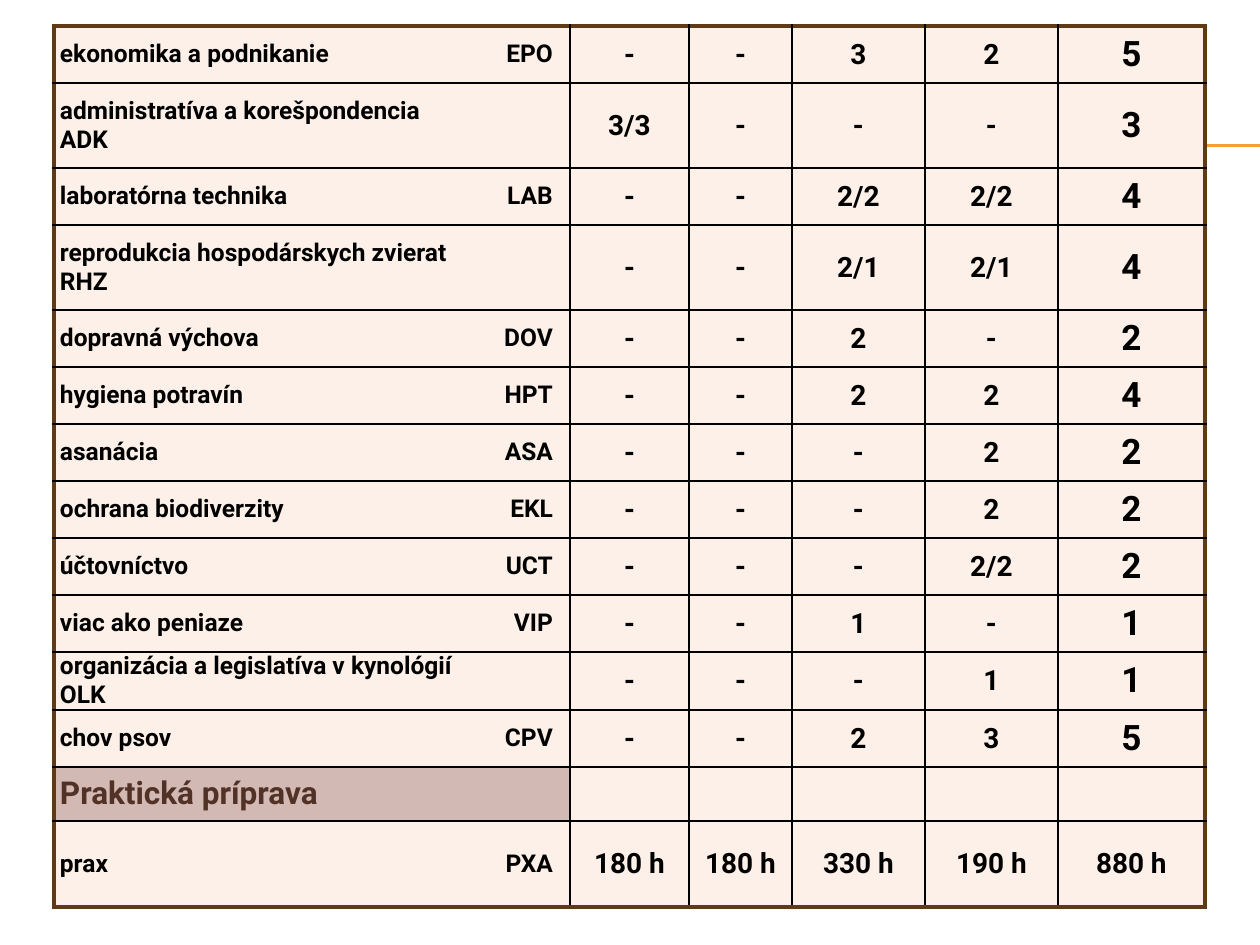
from lxml.etree import SubElement
from pptx import Presentation
from pptx.dml.color import RGBColor
from pptx.enum.shapes import MSO_CONNECTOR
from pptx.enum.text import MSO_ANCHOR, PP_ALIGN
from pptx.oxml import parse_xml
from pptx.oxml.ns import nsdecls, qn
from pptx.util import Emu, Pt

PX = 914400 / 126

BLACK = RGBColor(0x00, 0x00, 0x00)
FRAME = RGBColor(0x60, 0x3A, 0x14)
CREAM = RGBColor(0xFC, 0xF0, 0xE8)
ROSE = RGBColor(0xD3, 0xB9, 0xB3)
BROWN = RGBColor(0x52, 0x32, 0x27)
ORANGE = RGBColor(0xF0, 0xA2, 0x2E)

# Subject and code, four years, total; a tab sets the code at the right
SUBJECTS = [
    ("ekonomika a podnikanie\tEPO", "-", "-", "3", "2", "5"),
    ("administratíva a korešpondencia\nADK", "3/3", "-", "-", "-", "3"),
    ("laboratórna technika\tLAB", "-", "-", "2/2", "2/2", "4"),
    ("reprodukcia hospodárskych zvierat\nRHZ", "-", "-", "2/1", "2/1", "4"),
    ("dopravná výchova\tDOV", "-", "-", "2", "-", "2"),
    ("hygiena potravín\tHPT", "-", "-", "2", "2", "4"),
    ("asanácia\tASA", "-", "-", "-", "2", "2"),
    ("ochrana biodiverzity\tEKL", "-", "-", "-", "2", "2"),
    ("účtovníctvo\tUCT", "-", "-", "-", "2/2", "2"),
    ("viac ako peniaze\tVIP", "-", "-", "1", "-", "1"),
    ("organizácia a legislatíva v kynológií\nOLK", "-", "-", "-", "1", "1"),
    ("chov psov\tCPV", "-", "-", "2", "3", "5"),
]
HEADING = ("Praktická príprava", "", "", "", "", "")
PRACTICE = ("prax\tPXA", "180 h", "180 h", "330 h", "190 h", "880 h")

COLUMN_WIDTHS = [516, 119, 103, 133, 133, 147]
ROW_HEIGHTS = [57, 85, 57, 85] + [57] * 8 + [54, 86]
CODE_TAB = 493


def px(length):
    return Emu(round(length * PX))


def write(frame, text, *, font, size, color=BLACK, bold=True,
          align=PP_ALIGN.LEFT, tab=None):
    frame.text = text
    for para in frame.paragraphs:
        para.alignment = align
        if tab:
            stops = SubElement(para._p.get_or_add_pPr(), qn("a:tabLst"))
            SubElement(stops, qn("a:tab"), pos=str(px(tab)), algn="r")
        for span in para.runs:
            span.font.name = font
            span.font.size = Pt(size)
            span.font.bold = bold
            span.font.color.rgb = color


class SlideBuilder:
    font = "Roboto"
    inset = 6

    def __init__(self, slide):
        self.slide = slide

    def line(self, x1, y1, x2, y2, color, width):
        line = self.slide.shapes.add_connector(
            MSO_CONNECTOR.STRAIGHT, px(x1), px(y1), px(x2), px(y2))
        line.line.color.rgb = color
        line.line.width = Pt(width)
        SubElement(line._element.spPr, qn("a:effectLst"))

    def table(self, left, top, widths, heights):
        table = self.slide.shapes.add_table(
            len(heights), len(widths), px(left), px(top),
            px(sum(widths)), px(sum(heights))).table
        table.first_row = False
        table.horz_banding = False
        for column, width in zip(table.columns, widths):
            column.width = px(width)
        for row, height in zip(table.rows, heights):
            row.height = px(height)
        return table

    def cell(self, cell, text, fill, outer, **style):
        cell.fill.solid()
        cell.fill.fore_color.rgb = fill
        cell.vertical_anchor = MSO_ANCHOR.MIDDLE
        cell.margin_left = cell.margin_right = px(self.inset)
        cell.margin_top = cell.margin_bottom = 0
        write(cell.text_frame, text, font=self.font, **style)
        self.borders(cell, outer)

    def borders(self, cell, outer):
        properties = cell._tc.get_or_add_tcPr()
        for index, side in enumerate("LRTB"):
            color, width = (FRAME, 3) if side in outer else (BLACK, 1)
            properties.insert(index, parse_xml(
                f'<a:ln{side} {nsdecls("a")} w="{Pt(width)}"><a:solidFill>'
                f'<a:srgbClr val="{color}"/></a:solidFill></a:ln{side}>'))


def main():
    deck = Presentation()
    deck.slide_width, deck.slide_height = px(1260), px(945)
    page = SlideBuilder(deck.slides.add_slide(deck.slide_layouts[6]))

    # Double rule behind the table
    for y in (145, 146):
        page.line(70, y, 1260, y, ORANGE, 0.75)

    # Timetable of subjects
    rows = SUBJECTS + [HEADING, PRACTICE]
    table = page.table(54, 26, COLUMN_WIDTHS, ROW_HEIGHTS)
    last_row, last_column = len(rows) - 1, len(COLUMN_WIDTHS) - 1
    for r, row in enumerate(rows):
        for c, text in enumerate(row):
            edges = {"L": c == 0, "R": c == last_column,
                     "T": r == 0, "B": r == last_row}
            outer = [side for side, is_outer in edges.items() if is_outer]
            fill = CREAM
            if c == 0 and row is HEADING:
                fill = ROSE
                style = {"size": 18, "color": BROWN}
            elif c == 0:
                style = {"size": 14, "tab": CODE_TAB}
            else:
                is_total = c == last_column and row is not PRACTICE
                style = {"size": 20 if is_total else 16,
                         "align": PP_ALIGN.CENTER}
            page.cell(table.cell(r, c), text, fill, outer, **style)

    deck.save("out.pptx")


if __name__ == "__main__":
    main()
